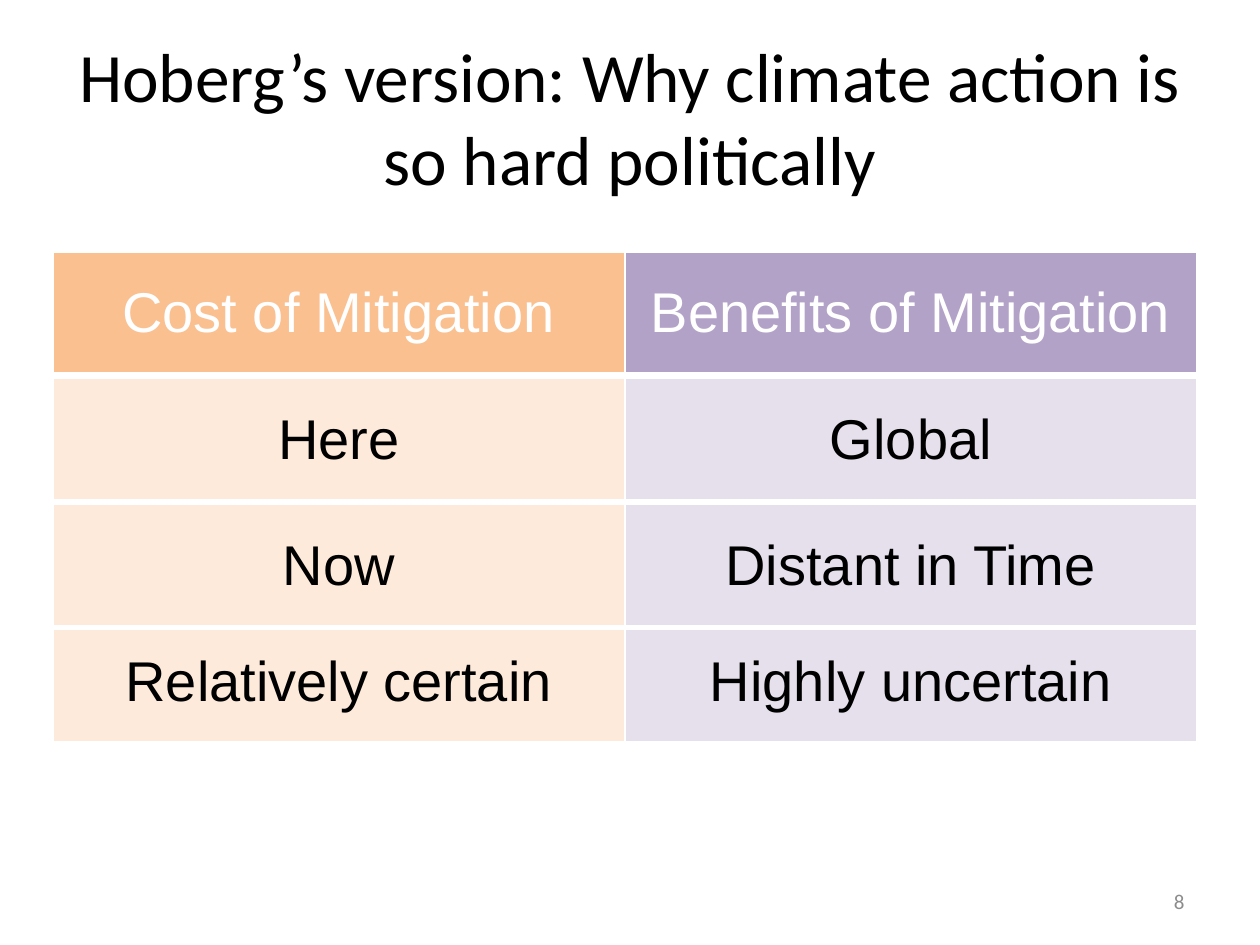
from typing import NamedTuple

from lxml import etree
from pptx import Presentation
from pptx.dml.color import RGBColor
from pptx.enum.text import MSO_ANCHOR, PP_ALIGN
from pptx.oxml.ns import qn
from pptx.util import Inches, Pt

MIDDLE = MSO_ANCHOR.MIDDLE
CENTER, RIGHT = PP_ALIGN.CENTER, PP_ALIGN.RIGHT

SLIDE_W, SLIDE_H = Inches(10), Inches(7.5)
TABLE_LEFT, TABLE_TOP, TABLE_W = Inches(0.42), Inches(2), Inches(9.08)
ROW_PITCH = Inches(1)

COLORS = {
    "black": "000000", "white": "FFFFFF", "gray": "8C8C8C",
    "orange": "FAC090", "purple": "B3A2C7",
    "pale_orange": "FDEADA", "pale_purple": "E6E0EC",
}
HEADER_FILLS = ("orange", "purple")
BODY_FILLS = ("pale_orange", "pale_purple")
BORDERS = {"a:lnL": 1, "a:lnR": 1, "a:lnT": 1, "a:lnB": 3}  # points


class Band(NamedTuple):
    row: float  # in row pitches below the table top
    height: float  # inches
    texts: tuple[str, str]
    fills: tuple[str, str] = BODY_FILLS
    color: str = "black"


class Label(NamedTuple):
    text: str
    box: tuple[float, float, float, float]  # shares of the slide's size
    size: float
    color: str
    align: PP_ALIGN


# Back to front: the last row sits slightly under the one above it
BANDS = (
    Band(0, 0.97, ("Cost of Mitigation", "Benefits of Mitigation"), HEADER_FILLS, "white"),
    Band(2.92, 0.98, ("Relatively certain", "Highly uncertain")),
    Band(2, 0.98, ("Now", "Distant in Time")),
    Band(1, 0.98, ("Here", "Global")),
)
LABELS = (
    Label("Hoberg’s version: Why climate action is so hard politically",
          (0.05, 0.04, 0.9, 1 / 6), 39.6, "black", CENTER),
    Label("8", (0.717, 0.927, 0.233, 0.053), 12, "gray", RIGHT),
)


def rgb(name: str) -> RGBColor:
    return RGBColor.from_string(COLORS[name])


def write(tf, text: str, font: str, size: float, color: str, align: PP_ALIGN) -> None:
    tf.text = text
    p = tf.paragraphs[0]
    p.alignment = align
    f = p.runs[0].font
    f.name, f.size, f.color.rgb = font, Pt(size), rgb(color)


def add_label(s, label: Label) -> None:
    x, y, w, h = label.box
    sp = s.shapes.add_textbox(int(x * SLIDE_W), int(y * SLIDE_H),
                              int(w * SLIDE_W), int(h * SLIDE_H))
    tf = sp.text_frame
    tf.word_wrap = True
    tf.vertical_anchor = MIDDLE
    write(tf, label.text, "Calibri", label.size, label.color, label.align)


def add_borders(cell) -> None:
    tc_pr = cell._tc.get_or_add_tcPr()
    for tag, width in BORDERS.items():
        ln = etree.SubElement(tc_pr, qn(tag), w=str(Pt(width)))
        fill = etree.SubElement(ln, qn("a:solidFill"))
        etree.SubElement(fill, qn("a:srgbClr"), val=COLORS["white"])


def add_band(s, band: Band) -> None:
    top = TABLE_TOP + int(band.row * ROW_PITCH)
    table = s.shapes.add_table(1, len(band.texts), TABLE_LEFT, top,
                               TABLE_W, Inches(band.height)).table
    table.horz_banding = False
    for cell, text, fill in zip(table.rows[0].cells, band.texts, band.fills):
        add_borders(cell)
        cell.fill.solid()
        cell.fill.fore_color.rgb = rgb(fill)
        cell.vertical_anchor = MIDDLE
        write(cell.text_frame, text, "Arial", 32, band.color, CENTER)
        cell.text_frame.paragraphs[0].runs[0].font.bold = False


def main() -> None:
    prs = Presentation()
    prs.slide_width, prs.slide_height = SLIDE_W, SLIDE_H
    s = prs.slides.add_slide(prs.slide_layouts[6])
    # Title and page number
    for label in LABELS:
        add_label(s, label)
    # Comparison rows, one table each
    for band in BANDS:
        add_band(s, band)
    prs.save("out.pptx")


if __name__ == "__main__":
    main()
